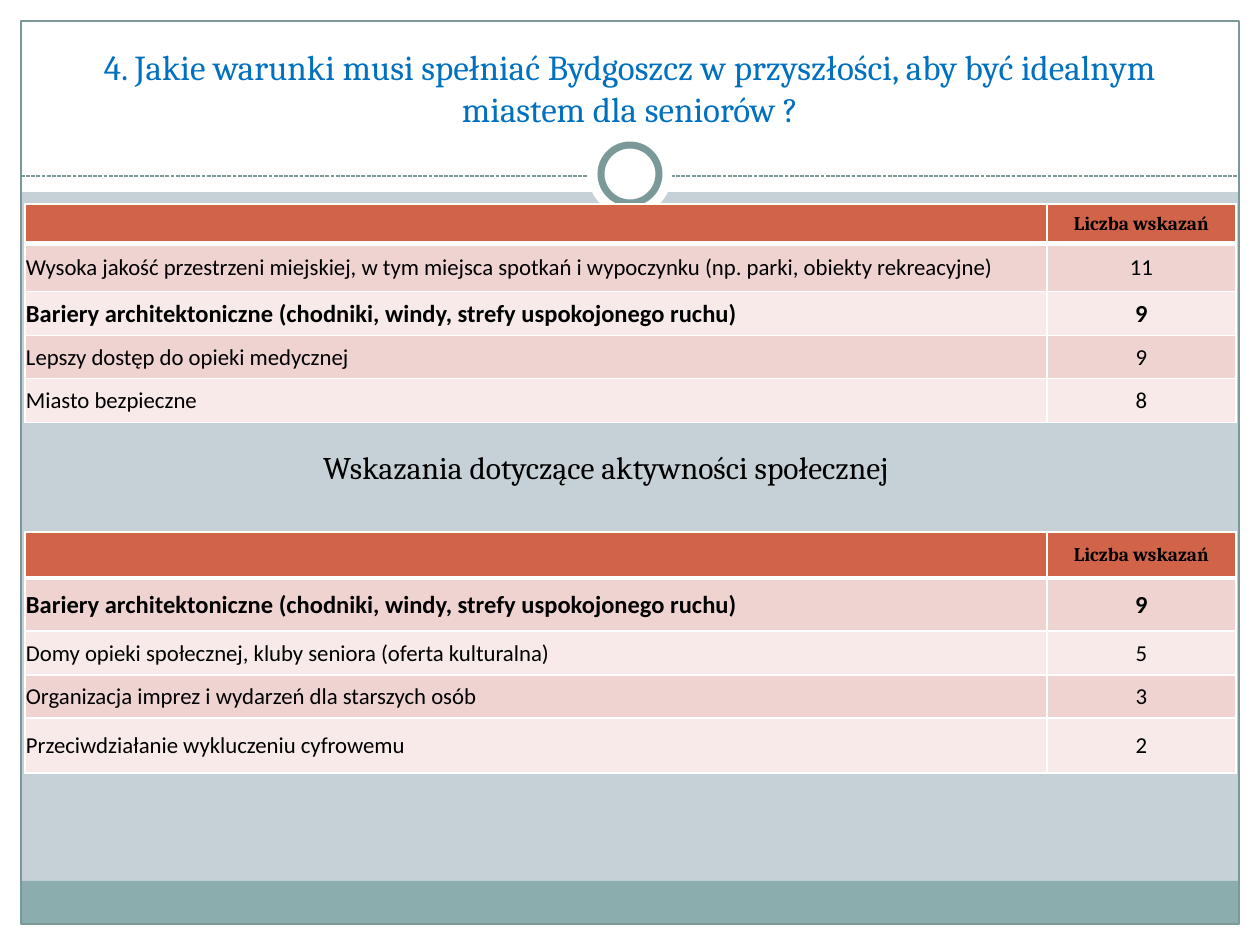
from lxml.etree import SubElement
from pptx import Presentation
from pptx.dml.color import RGBColor
from pptx.enum.dml import MSO_LINE
from pptx.enum.shapes import MSO_CONNECTOR, MSO_SHAPE
from pptx.enum.text import MSO_ANCHOR, PP_ALIGN
from pptx.oxml.ns import qn
from pptx.util import Pt

PX = 914400 // 126
WHITE = RGBColor(0xFF, 0xFF, 0xFF)
BLACK = RGBColor(0, 0, 0)
BACKDROP = RGBColor(0xC5, 0xD1, 0xD7)
FOOTER = RGBColor(0x8C, 0xAD, 0xAE)
FRAME = RGBColor(0x7C, 0x99, 0x9A)
TITLE_BLUE = RGBColor(0x00, 0x70, 0xC0)
HEADER = RGBColor(0xD1, 0x63, 0x49)
BANDS = RGBColor(0xEE, 0xD3, 0xD0), RGBColor(0xF7, 0xEA, 0xE9)

TITLE = ("4. Jakie warunki musi spełniać Bydgoszcz w przyszłości, "
         "aby być idealnym miastem dla seniorów ?")
SUBTITLE = "Wskazania dotyczące aktywności społecznej"
COUNT_HEADER = "Liczba wskazań"
BARRIERS = "Bariery architektoniczne (chodniki, windy, strefy uspokojonego ruchu)"
CONDITIONS = [
    ("Wysoka jakość przestrzeni miejskiej, w tym miejsca spotkań i wypoczynku "
     "(np. parki, obiekty rekreacyjne)", 11),
    (BARRIERS, 9),
    ("Lepszy dostęp do opieki medycznej", 9),
    ("Miasto bezpieczne", 8),
]
ACTIVITIES = [
    (BARRIERS, 9),
    ("Domy opieki społecznej, kluby seniora (oferta kulturalna)", 5),
    ("Organizacja imprez i wydarzeń dla starszych osób", 3),
    ("Przeciwdziałanie wykluczeniu cyfrowemu", 2),
]
# Answers, top of the table and row heights in px
TABLES = [
    (CONDITIONS, 204, [38, 48, 44, 43, 44]),
    (ACTIVITIES, 532, [46, 53, 44, 43, 55]),
]
TABLE_LEFT, COLUMNS = 25, (1022, 189)
# Left, top, width and height in px
WHITE_BANDS = [(0, 924, 1260, 21), (0, 0, 1260, 192),
               (0, 0, 21, 945), (1239, 0, 21, 945)]


def emu(*lengths):
    return [length * PX for length in lengths]


def write(frame, text, size, font="Cambria", color=BLACK, bold=False,
          align=PP_ALIGN.CENTER):
    frame.word_wrap = True
    paragraph = frame.paragraphs[0]
    paragraph.alignment = align
    run = paragraph.add_run()
    run.text = text
    run.font.size = Pt(size)
    run.font.name = font
    run.font.bold = bold
    run.font.color.rgb = color


def add_shape(slide, preset, box, fill=None, line=None, width=0.75):
    shape = slide.shapes.add_shape(preset, *emu(*box))
    shape.shadow.inherit = False
    if fill is None:
        shape.fill.background()
    else:
        shape.fill.solid()
        shape.fill.fore_color.rgb = fill
    if line is None:
        shape.line.fill.background()
    else:
        shape.line.color.rgb = line
        shape.line.width = Pt(width)
    return shape


def add_border(cell, side, points):
    line = SubElement(cell._tc.get_or_add_tcPr(), qn(f"a:ln{side}"), w=str(Pt(points)))
    SubElement(SubElement(line, qn("a:solidFill")), qn("a:srgbClr"), val=str(WHITE))


def style_cell(cell, row, fill):
    cell.margin_left = cell.margin_right = cell.margin_top = PX
    cell.margin_bottom = 0
    cell.vertical_anchor = MSO_ANCHOR.MIDDLE
    for side in "LRTB":
        under_header = (row, side) in ((0, "B"), (1, "T"))
        add_border(cell, side, 3 if under_header else 1)
    cell.fill.solid()
    cell.fill.fore_color.rgb = fill


def add_answers(slide, answers, top, heights):
    table = slide.shapes.add_table(
        len(heights), len(COLUMNS),
        *emu(TABLE_LEFT, top, sum(COLUMNS), sum(heights))).table
    for column, width in zip(table.columns, COLUMNS):
        column.width = width * PX
    for row, height in enumerate(heights):
        table.rows[row].height = height * PX
        for cell in table.rows[row].cells:
            style_cell(cell, row, BANDS[(row - 1) % 2] if row else HEADER)
    write(table.cell(0, 1).text_frame, COUNT_HEADER, 11, bold=True)
    for row, (answer, count) in enumerate(answers, 1):
        bold = answer == BARRIERS
        look = dict(size=14 if bold else 13, font="Calibri", bold=bold)
        write(table.cell(row, 0).text_frame, answer, align=PP_ALIGN.LEFT, **look)
        write(table.cell(row, 1).text_frame, str(count), **look)


def add_backdrop(slide):
    """Draw the frame and return its topmost shape, the ring."""
    slide.background.fill.solid()
    slide.background.fill.fore_color.rgb = BACKDROP
    for band in WHITE_BANDS:
        add_shape(slide, MSO_SHAPE.RECTANGLE, band, WHITE)
    add_shape(slide, MSO_SHAPE.RECTANGLE, (21, 881, 1217, 43), FOOTER)
    add_shape(slide, MSO_SHAPE.RECTANGLE, (21, 21, 1218, 903), line=FRAME)
    divider = slide.shapes.add_connector(
        MSO_CONNECTOR.STRAIGHT, *emu(21, 176, 1239, 176))
    divider.line.color.rgb = FRAME
    divider.line.width = Pt(0.75)
    divider.line.dash_style = MSO_LINE.SQUARE_DOT
    SubElement(divider.element.spPr, qn("a:effectLst"))
    add_shape(slide, MSO_SHAPE.OVAL, (588, 132, 84, 84), WHITE)
    return add_shape(slide, MSO_SHAPE.OVAL, (601, 145, 58, 58), WHITE, FRAME, 4)


def main():
    prs = Presentation()
    prs.slide_width, prs.slide_height = emu(1260, 945)
    slide = prs.slides.add_slide(prs.slide_layouts[5])
    ring = add_backdrop(slide)

    title = slide.shapes.title
    title.left, title.top, title.width, title.height = emu(42, 32, 1176, 104)
    title.text_frame.vertical_anchor = MSO_ANCHOR.BOTTOM
    write(title.text_frame, TITLE, 20, color=TITLE_BLUE)
    ring.element.addnext(title.element)

    for answers, top, heights in TABLES:
        add_answers(slide, answers, top, heights)
    subtitle = slide.shapes.add_textbox(*emu(35, 442, 1142, 50))
    write(subtitle.text_frame, SUBTITLE, 18)
    prs.save("out.pptx")


if __name__ == "__main__":
    main()
